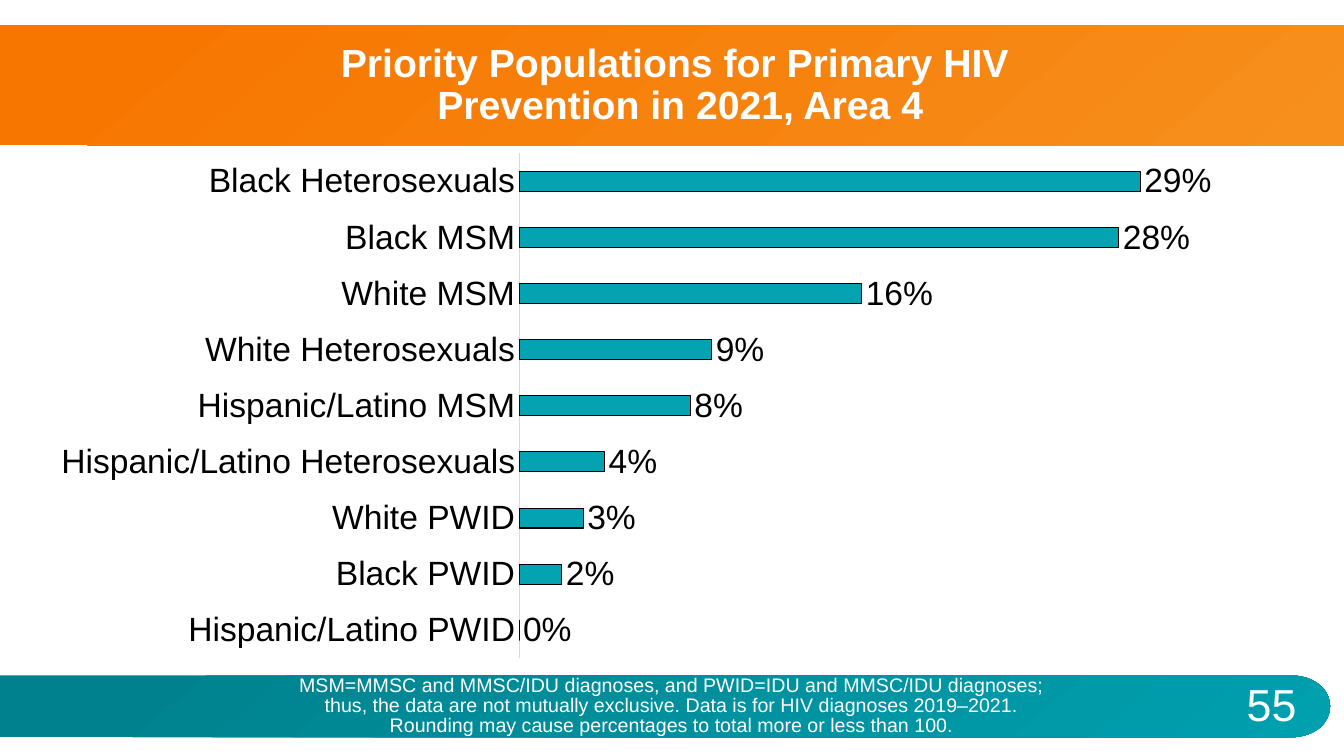
from lxml import etree
from pptx import Presentation
from pptx.chart.data import CategoryChartData
from pptx.dml.color import RGBColor
from pptx.enum.chart import (XL_CHART_TYPE as ChartType, XL_LABEL_POSITION as LabelPosition,
                             XL_TICK_LABEL_POSITION as TickLabels, XL_TICK_MARK as TickMark)
from pptx.enum.shapes import MSO_SHAPE as Preset
from pptx.enum.text import MSO_ANCHOR as Anchor, PP_ALIGN as Align
from pptx.oxml.ns import qn
from pptx.util import Cm, Pt

SHARES = {
    "Black Heterosexuals": 29,
    "Black MSM": 28,
    "White MSM": 16,
    "White Heterosexuals": 9,
    "Hispanic/Latino MSM": 8,
    "Hispanic/Latino Heterosexuals": 4,
    "White PWID": 3,
    "Black PWID": 2,
    "Hispanic/Latino PWID": 0,
}
FOOTNOTE = [
    "MSM=MMSC and MMSC/IDU diagnoses, and PWID=IDU and MMSC/IDU diagnoses;",
    "thus, the data are not mutually exclusive. Data is for HIV diagnoses 2019–2021.\v"
    "Rounding may cause percentages to total more or less than 100.",
]


def color(code):
    return RGBColor.from_string(code)


class SlideBuilder:
    font = "Arial"
    white, black, teal, axis_gray = "FFFFFF", "000000", "03A3B2", "D9D9D9"

    def __init__(self, page):
        self.page = page

    def style(self, font, size, code, bold=False):
        font.name, font.size, font.bold = self.font, Pt(size), bold
        font.color.rgb = color(code)

    def gradient(self, shape, start, end):
        shape.shadow.inherit = False
        shape.line.fill.background()
        shape.fill.gradient()
        shape.fill.gradient_angle = 310
        for stop, position, code in zip(shape.fill.gradient_stops, (0.09, 1), (start, end)):
            stop.position = position
            stop.color.rgb = color(code)

    def banner(self, left, top, width, height, start, end):
        shape = self.page.shapes.add_shape(Preset.RECTANGLE, Cm(left), Cm(top), Cm(width), Cm(height))
        self.gradient(shape, start, end)

    def footer_band(self, top, bottom, straight, bulge, start, end, steps=24):
        """A band from the left edge whose right end is one Bezier curve."""
        curve = []
        for step in range(1, steps + 1):
            t = step / steps
            x = straight + 3 * t * (1 - t) * bulge
            y = top + (bottom - top) * t * t * (3 - 2 * t)
            curve.append((Cm(x), Cm(y)))
        builder = self.page.shapes.build_freeform(Cm(straight), Cm(top))
        builder.add_line_segments(curve + [(0, Cm(bottom)), (0, Cm(top))], close=True)
        self.gradient(builder.convert_to_shape(), start, end)

    def fill_text(self, box, lines, size, spacing=1.0, bold=False, anchor=Anchor.MIDDLE):
        frame = box.text_frame
        frame.word_wrap = True
        frame.vertical_anchor = anchor
        for index, line in enumerate(lines):
            para = frame.add_paragraph() if index else frame.paragraphs[0]
            para.text = line
            para.alignment = Align.CENTER
            para.line_spacing = spacing
            para.space_before = Pt(0)
            self.style(para.font, size, self.white, bold)

    def title(self, text, left, top, width, height):
        title = self.page.shapes.title
        title.left, title.top, title.width, title.height = Cm(left), Cm(top), Cm(width), Cm(height)
        title.element.getparent().append(title.element)  # bring in front of the banner
        self.fill_text(title, [text], 28, 0.9, bold=True)

    def text(self, lines, left, top, width, height, size, **options):
        box = self.page.shapes.add_textbox(Cm(left), Cm(top), Cm(width), Cm(height))
        self.fill_text(box, lines, size, **options)

    def bar_chart(self, shares, left, top, width, height, plot):
        data = CategoryChartData(number_format="0")
        data.categories = list(shares)
        data.add_series("Series 1", list(shares.values()))
        chart = self.page.shapes.add_chart(
            ChartType.BAR_CLUSTERED, Cm(left), Cm(top), Cm(width), Cm(height), data).chart
        chart.has_title = chart.has_legend = False
        self.style(chart.font, 10, self.black)

        # Axes
        for axis in (chart.category_axis, chart.value_axis):
            axis.major_tick_mark = axis.minor_tick_mark = TickMark.NONE
            axis.has_major_gridlines = False
        groups = chart.category_axis
        groups.reverse_order = True
        self.style(groups.tick_labels.font, 24, self.black)
        groups.format.line.color.rgb = color(self.axis_gray)
        groups.format.line.width = Pt(0.75)
        scale = chart.value_axis
        scale.minimum_scale, scale.maximum_scale = 0, 35
        scale.tick_label_position = TickLabels.NONE
        scale.format.line.fill.background()

        # Bars and their labels
        bars = chart.plots[0]
        bars.gap_width, bars.vary_by_categories = 182, False
        look = bars.series[0].format
        look.fill.solid()
        look.fill.fore_color.rgb = color(self.teal)
        look.line.color.rgb = color(self.black)
        look.line.width = Pt(0.75)
        labels = bars.series[0].data_labels
        labels.show_value = True
        labels.position = LabelPosition.OUTSIDE_END
        labels.number_format, labels.number_format_is_linked = r"0\%", False
        self.style(labels.font, 24, self.black)
        self.place_plot(chart, plot)

    def place_plot(self, chart, plot):
        area = chart.element.find(".//" + qn("c:plotArea"))
        for old in area.findall(qn("c:layout")):
            area.remove(old)
        layout = etree.Element(qn("c:layout"))
        manual = etree.SubElement(layout, qn("c:manualLayout"))
        settings = [("layoutTarget", "inner"), ("xMode", "edge"), ("yMode", "edge")]
        for name, value in settings + list(zip("xywh", plot)):
            etree.SubElement(manual, qn("c:" + name)).set("val", str(value))
        area.insert(0, layout)


def main():
    deck = Presentation()
    deck.slide_width, deck.slide_height = Cm(33.87), Cm(19.05)
    slide = SlideBuilder(deck.slides.add_slide(deck.slide_layouts[5]))

    # Background bands
    slide.footer_band(17.02, 18.58, 32.5, 1.36, "00828E", "00A0AF")
    slide.banner(0, 0.64, 33.87, 3.02, "F77600", "F78F1C")

    # Slide number, chart, title and footnote
    slide.text(["55"], 30.66, 16.97, 2.77, 1.5, 32)
    slide.bar_chart(SHARES, 0.91, 3.73, 32.03, 13.54, plot=(0.38, 0.01, 0.59, 0.94))
    slide.title("Priority Populations for Primary HIV\v Prevention in 2021, Area 4",
                1.88, 0.66, 30.25, 3)
    slide.text(FOOTNOTE, 0.58, 16.92, 32.69, 1.78, 14, spacing=0.85, anchor=Anchor.TOP)
    deck.save("out.pptx")


if __name__ == "__main__":
    main()
